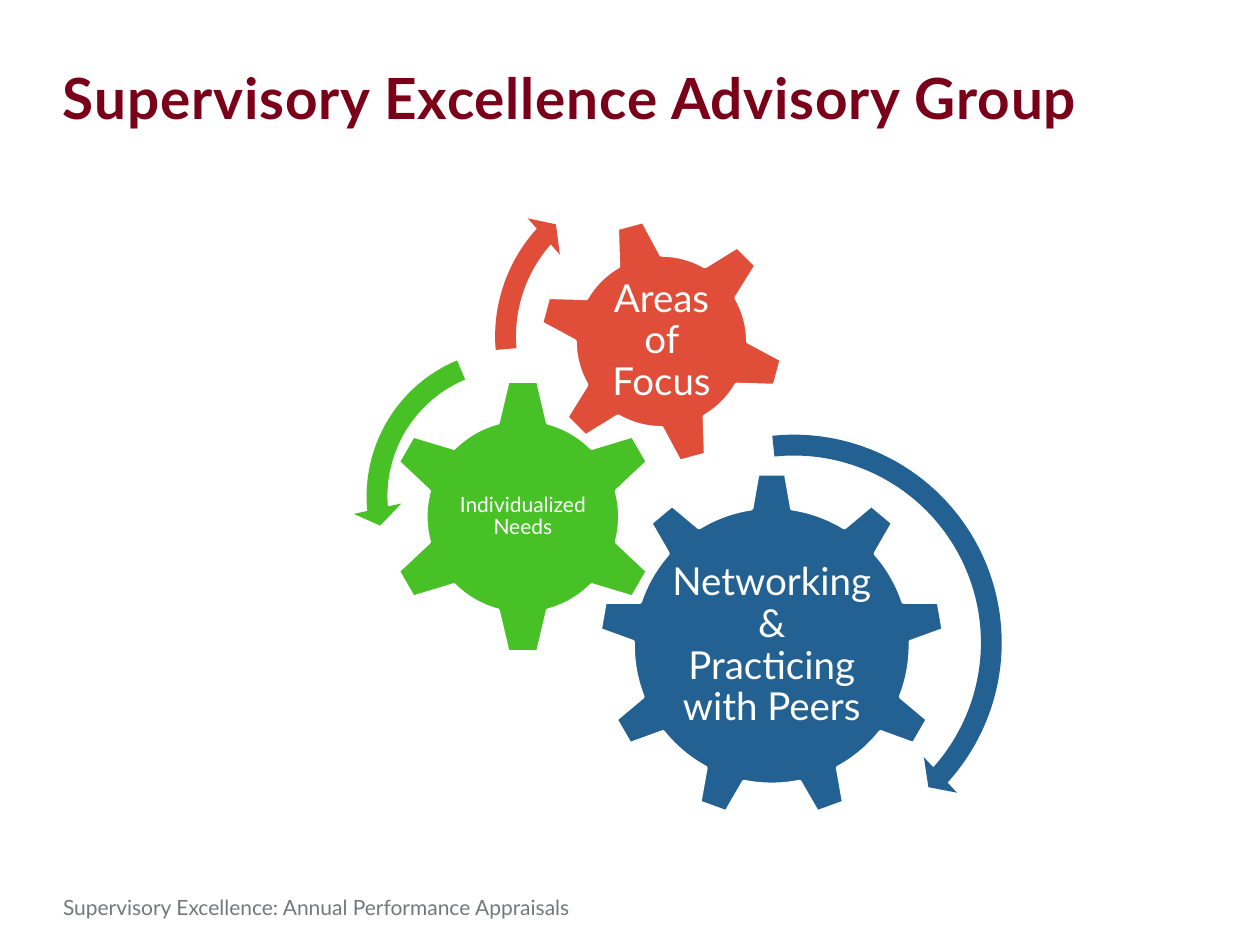
from pptx import Presentation
from pptx.dml.color import RGBColor
from pptx.enum.shapes import MSO_SHAPE
from pptx.enum.text import MSO_ANCHOR, PP_ALIGN
from pptx.util import Inches, Pt

COLS, ROWS = 40, 30
CELL = Inches(10) // COLS
HEX = {"blue": "236192", "green": "48C126", "red": "E04E39",
       "maroon": "7A0019", "gray": "75787B", "white": "FFFFFF"}

# gear, colour, left, top, size, turn, label, label width, label height, points
GEARS = [
    (MSO_SHAPE.GEAR_9, "blue", 19, 15, 11, 0,
     "Networking & Practicing with Peers", 6.56, 5.64, 22),
    (MSO_SHAPE.GEAR_6, "green", 12.2, 12, 8.8, 0,
     "Individualized Needs", 4.36, 4.32, 12),
    (MSO_SHAPE.GEAR_6, "red", 17.08, 6.92, 7.84, 345,
     "Areas of Focus", 4.4, 4.4, 22),
]
# arrow, colour, left, top, size, band %, head degrees, end, start, head %
ARROWS = [
    (MSO_SHAPE.CIRCULAR_ARROW, "blue", 18.16, 13.36, 14.08,
     4.69, 4.98, 42.07, 264.06, 5.47),
    (MSO_SHAPE.LEFT_CIRCULAR_ARROW, "green", 11.2, 10.64, 10.24,
     6.45, 7.17, 174.82, 247.3, 7.53),
    (MSO_SHAPE.CIRCULAR_ARROW, "red", 15.28, 5.16, 11.04,
     5.98, 6.57, 221.9, 175.14, 6.98),
]


def rgb(name):
    return RGBColor.from_string(HEX[name])


def grid(*cells):
    return [round(CELL * n) for n in cells]


def apply(item, style):
    for key, value in style.items():
        setattr(item, key, value)


def text(slide, area, words, size, color, bold=False, pad=0, **para):
    frame = slide.shapes.add_textbox(*grid(*area)).text_frame
    sides = ("left", "top", "right", "bottom")
    apply(frame, {f"margin_{side}": Inches(pad) for side in sides})
    frame.word_wrap = True
    line = frame.paragraphs[0]
    apply(line, para)
    run = line.add_run()
    run.text = words
    apply(run.font, {"name": "Lato", "size": Pt(size), "bold": bold})
    run.font.color.rgb = rgb(color)
    return frame, run


def shape(slide, kind, color, left, top, size):
    item = slide.shapes.add_shape(kind, *grid(left, top, size, size))
    item.shadow.inherit = False
    item.fill.solid()
    item.fill.fore_color.rgb = rgb(color)
    return item


def gear(slide, kind, color, left, top, size, turn, words, wide, high, points):
    """Draw a gear with its upright label centred on the hub."""
    item = shape(slide, kind, color, left, top, size)
    item.rotation = turn
    item.line.color.rgb = rgb("white")
    item.line.width = Pt(2)
    area = (left + (size - wide) / 2, top + (size - high) / 2, wide, high)
    frame, _ = text(slide, area, words, points, "white", pad=0.03,
                    alignment=PP_ALIGN.CENTER, line_spacing=0.9)
    frame.vertical_anchor = MSO_ANCHOR.MIDDLE


def arrow(slide, kind, color, left, top, size, band, tip, end, start, head):
    item = shape(slide, kind, color, left, top, size)
    item.line.fill.background()
    # Angles count 60000 to the degree, against 100000 to the unit.
    values = [band / 100, tip * 0.6, end * 0.6, start * 0.6, head / 100]
    for i, value in enumerate(values):
        item.adjustments[i] = value


def main():
    deck = Presentation()
    apply(deck, {"slide_width": CELL * COLS, "slide_height": CELL * ROWS})
    slide = deck.slides.add_slide(deck.slide_layouts[6])
    text(slide, (2, 28.4, 26.72, 1.24),
         "Supervisory Excellence: Annual Performance Appraisals", 12, "gray")
    for row in GEARS:
        gear(slide, *row)
    for row in ARROWS:
        arrow(slide, *row)
    _, run = text(slide, (2, 2, 36, 3.04),
                  "Supervisory Excellence Advisory Group", 32.4, "maroon", True)
    run.font._element.set("spc", "50")
    deck.save("out.pptx")


if __name__ == "__main__":
    main()
